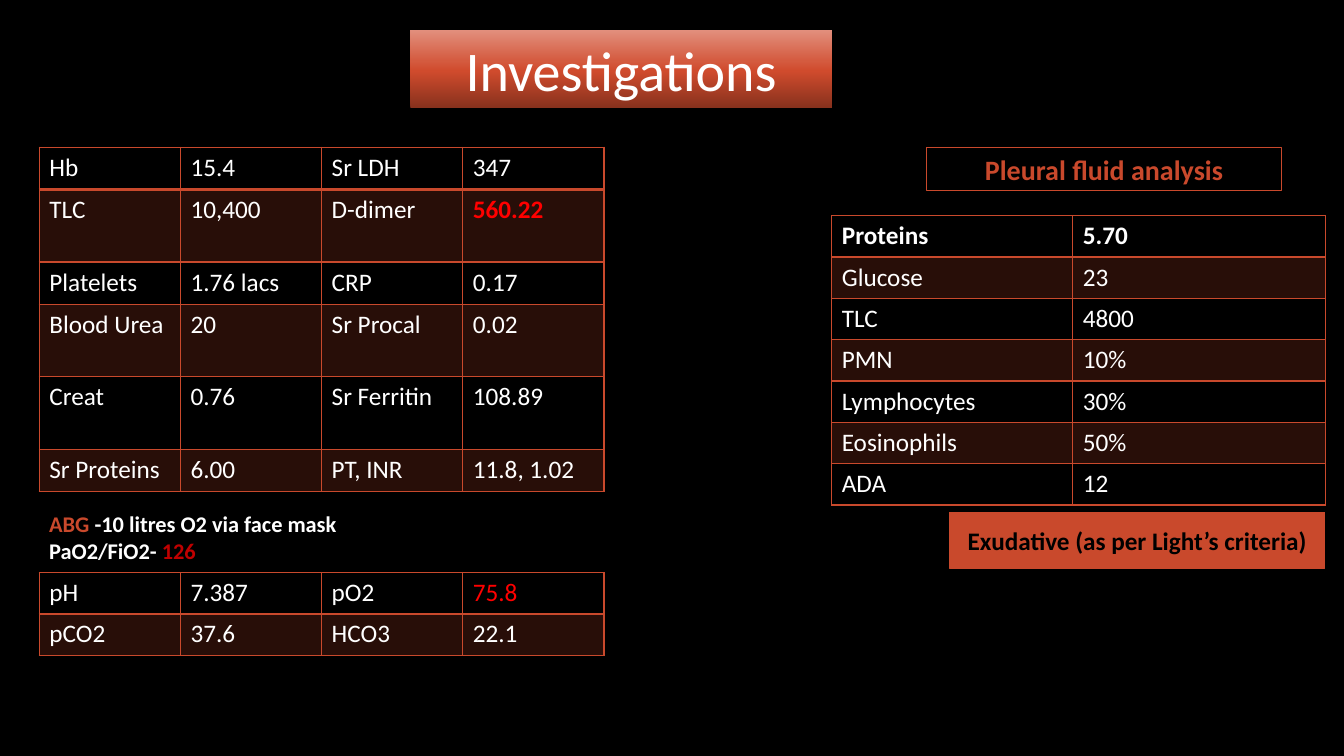
from lxml.etree import SubElement
from pptx import Presentation
from pptx.dml.color import RGBColor
from pptx.enum.shapes import MSO_SHAPE
from pptx.enum.text import MSO_ANCHOR, PP_ALIGN
from pptx.oxml import parse_xml
from pptx.oxml.ns import nsdecls, qn
from pptx.util import Inches, Pt

COLORS = {
    "background": "000000",
    "text": "FFFFFF",
    "accent": "C9492C",
    "alert": "FF0000",
    "ratio": "C00000",
    "dark": "000000",
}
TITLE_GRADIENT = {0: "87311D", 48: "D04B2D", 100: "E28F7D"}

BLOOD_RESULTS = [
    ["Hb", "15.4", "Sr LDH", "347"],
    ["TLC", "10,400", "D-dimer", "560.22"],
    ["Platelets", "1.76 lacs", "CRP", "0.17"],
    ["Blood Urea", "20", "Sr Procal", "0.02"],
    ["Creat", "0.76", "Sr Ferritin", "108.89"],
    ["Sr Proteins", "6.00", "PT, INR", "11.8, 1.02"],
]
BLOOD_GAS = [
    ["pH", "7.387", "pO2", "75.8"],
    ["pCO2", "37.6", "HCO3", "22.1"],
]
PLEURAL_FLUID = [
    ["Proteins", "5.70"],
    ["Glucose", "23"],
    ["TLC", "4800"],
    ["PMN", "10%"],
    ["Lymphocytes", "30%"],
    ["Eosinophils", "50%"],
    ["ADA", "12"],
]


def rgb(name):
    return RGBColor.from_string(COLORS[name])


def add_text(paragraph, text, size=18, color="text", bold=False, align=None):
    run = paragraph.add_run()
    run.text = text
    run.font.name = "Calibri"
    run.font.size = Pt(size)
    run.font.bold = bold
    run.font.color.rgb = rgb(color)
    if align is not None:
        paragraph.alignment = align


def set_borders(cell, bottom_width):
    properties = cell._tc.get_or_add_tcPr()
    widths = {"lnL": 1, "lnR": 1, "lnT": 1, "lnB": bottom_width}
    for side, width in widths.items():
        line = SubElement(properties, qn(f"a:{side}"), w=str(Pt(width)))
        fill = SubElement(line, qn("a:solidFill"))
        SubElement(fill, qn("a:srgbClr"), val=COLORS["accent"])


def fill_band(cell):
    cell.fill.solid()
    cell.fill.fore_color.rgb = rgb("accent")
    color = cell._tc.tcPr.find(qn("a:solidFill")).find(qn("a:srgbClr"))
    SubElement(color, qn("a:alpha"), val="20000")


def add_results(slide, left, top, widths, heights, rows, formats=None, bold_header=False):
    formats = formats or {}
    table = slide.shapes.add_table(
        len(rows), len(widths), Inches(left), Inches(top),
        Inches(sum(widths)), Inches(sum(heights)),
    ).table
    table.first_row = False
    table.horz_banding = False
    for column, width in zip(table.columns, widths):
        column.width = Inches(width)
    for index, (values, height) in enumerate(zip(rows, heights)):
        table.rows[index].height = Inches(height)
        for cell, value in zip(table.rows[index].cells, values):
            set_borders(cell, 2 if index == 0 else 1)
            if index % 2:
                fill_band(cell)
            else:
                cell.fill.background()
            text_format = {"bold": bold_header and index == 0, **formats.get(value, {})}
            add_text(cell.text_frame.paragraphs[0], value, **text_format)


def add_label(slide, box, text, line_width, fill=None, **text_format):
    shape = slide.shapes.add_shape(MSO_SHAPE.RECTANGLE, *map(Inches, box))
    shape.shadow.inherit = False
    shape.line.color.rgb = rgb("accent")
    shape.line.width = Pt(line_width)
    if fill:
        shape.fill.solid()
        shape.fill.fore_color.rgb = rgb(fill)
    else:
        shape.fill.background()
    shape.text_frame.word_wrap = True
    shape.text_frame.vertical_anchor = MSO_ANCHOR.MIDDLE
    add_text(shape.text_frame.paragraphs[0], text, bold=True,
             align=PP_ALIGN.CENTER, **text_format)


def add_title(slide, text):
    title = slide.shapes.title
    title.left, title.top = Inches(4.07), Inches(0.3)
    title.width, title.height = Inches(4.18), Inches(0.77)
    stops = "".join(
        f'<a:gs pos="{position * 1000}"><a:srgbClr val="{color}"/></a:gs>'
        for position, color in TITLE_GRADIENT.items()
    )
    title._element.spPr.append(parse_xml(
        f'<a:gradFill {nsdecls("a")} rotWithShape="1"><a:gsLst>{stops}</a:gsLst>'
        '<a:lin ang="16200000" scaled="0"/></a:gradFill>'
    ))
    title.text_frame.vertical_anchor = MSO_ANCHOR.MIDDLE
    paragraph = title.text_frame.paragraphs[0]
    paragraph.line_spacing = 1.0
    add_text(paragraph, text, size=40, align=PP_ALIGN.CENTER)


def add_note(slide, box, lines):
    frame = slide.shapes.add_textbox(*map(Inches, box)).text_frame
    frame.word_wrap = True
    for index, runs in enumerate(lines):
        paragraph = frame.add_paragraph() if index else frame.paragraphs[0]
        for text, color in runs:
            add_text(paragraph, text, size=16, color=color, bold=True)


def main():
    presentation = Presentation()
    presentation.slide_width = Inches(13.33)
    presentation.slide_height = Inches(7.5)
    slide = presentation.slides.add_slide(presentation.slide_layouts[5])
    slide.background.fill.solid()
    slide.background.fill.fore_color.rgb = rgb("background")

    add_title(slide, "Investigations")
    add_results(slide, 0.39, 1.46, [1.4] * 4, [0.42, 0.72, 0.42, 0.72, 0.72, 0.42],
                BLOOD_RESULTS, {"560.22": {"color": "alert", "bold": True}})
    add_results(slide, 0.39, 5.68, [1.4] * 4, [0.41] * 2,
                BLOOD_GAS, {"75.8": {"color": "alert"}})
    add_results(slide, 8.25, 2.14, [2.39, 2.51], [0.41] * 7,
                PLEURAL_FLUID, bold_header=True)
    add_label(slide, (9.19, 1.46, 3.52, 0.43), "Pleural fluid analysis", 0.75,
              size=20, color="accent")
    add_label(slide, (9.42, 5.08, 3.72, 0.56), "Exudative (as per Light’s criteria)", 0.5,
              fill="accent", color="dark")
    add_note(slide, (0.39, 5.01, 5.3, 0.94), [
        [("ABG", "accent"), (" -10 litres O2 via face mask", "text")],
        [("PaO2/FiO2- ", "text"), ("126", "ratio")],
    ])
    presentation.save("out.pptx")


if __name__ == "__main__":
    main()
